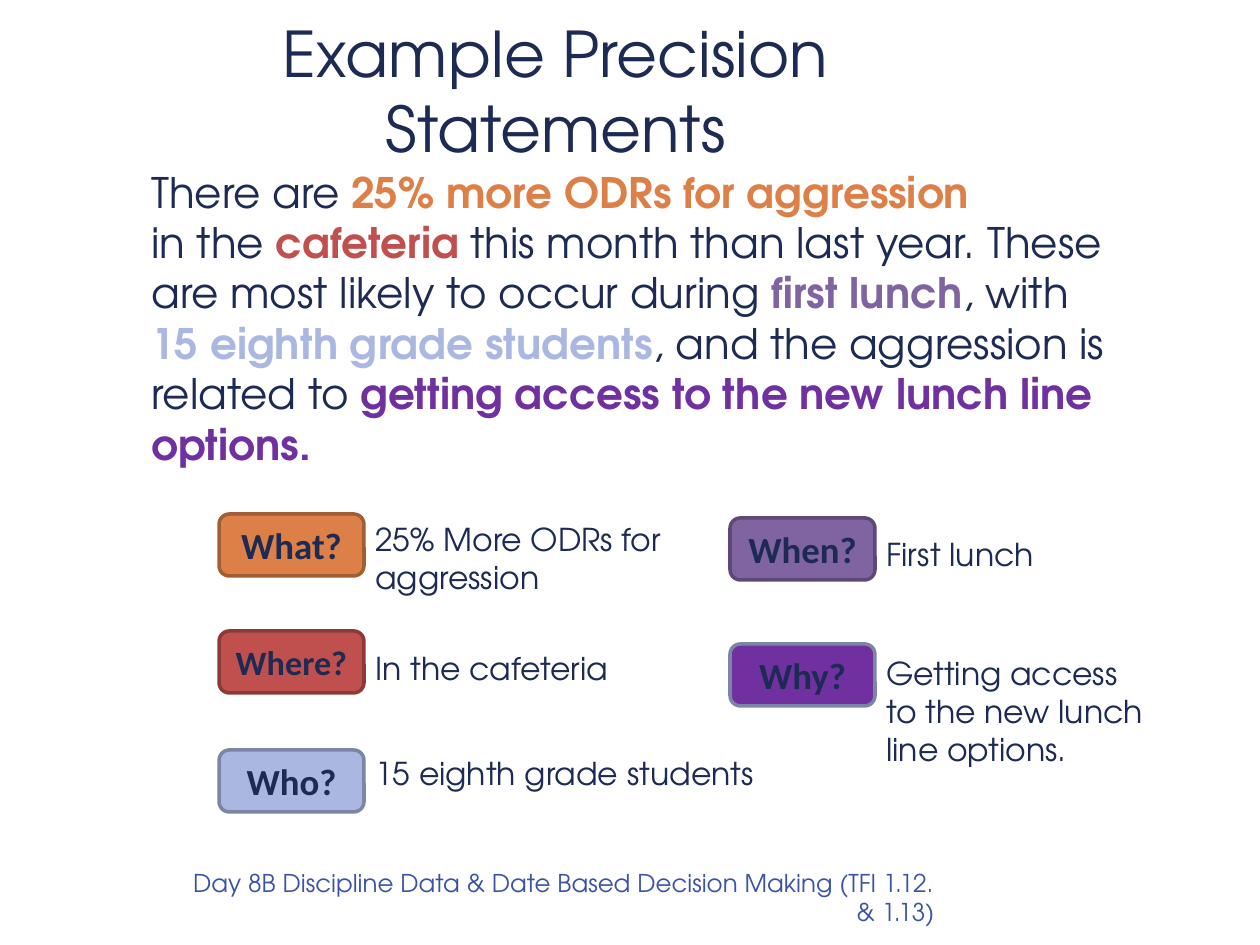
from typing import NamedTuple

from pptx import Presentation
from pptx.dml.color import RGBColor
from pptx.enum.shapes import MSO_SHAPE
from pptx.enum.text import MSO_ANCHOR, PP_ALIGN
from pptx.util import Emu, Pt

ROUND = MSO_SHAPE.ROUNDED_RECTANGLE
MIDDLE = MSO_ANCHOR.MIDDLE
LEFT, CENTER, RIGHT = PP_ALIGN.LEFT, PP_ALIGN.CENTER, PP_ALIGN.RIGHT

SCALE = 914400 / 126
FONT = "TeX Gyre Adventor"
TAG_FONT = "Calibri"

NAVY = RGBColor(0x1D, 0x2A, 0x53)
BLUE = RGBColor(0x3A, 0x53, 0xA5)
ORANGE = RGBColor(0xDD, 0x80, 0x47)
RED = RGBColor(0xC0, 0x50, 0x4D)
MAUVE = RGBColor(0x80, 0x64, 0xA2)
SKY = RGBColor(0xAA, 0xB7, 0xE1)
PURPLE = RGBColor(0x70, 0x30, 0xA0)
BROWN = RGBColor(0xA1, 0x5D, 0x33)
MAROON = RGBColor(0x8C, 0x3A, 0x38)
PLUM = RGBColor(0x5D, 0x48, 0x76)
SLATE = RGBColor(0x7C, 0x85, 0xA4)

TAG_W, TAG_H = 145, 62
COL_ONE, COL_TWO = 219, 730


class Box(NamedTuple):
    left: int
    top: int
    width: int
    height: int


class Entry(NamedTuple):
    """A coloured question tag with its answer to the right."""
    label: str
    answer: str
    left: int
    top: int
    fill: RGBColor
    edge: RGBColor
    note_top: int
    note_w: int
    note_h: int
    size: float = 21


class Part(NamedTuple):
    text: str
    color: RGBColor = NAVY


ENTRIES = [
    Entry("Why?", "Getting access to the new lunch line options.",
          COL_TWO, 644, PURPLE, SLATE, 648, 292, 127),
    Entry("When?", "First lunch", COL_TWO, 518, MAUVE, PLUM, 529, 348, 50),
    Entry("Who?", "15 eighth grade students",
          COL_ONE, 750, SKY, SLATE, 748, 650, 50),
    Entry("Where?", "In the cafeteria",
          COL_ONE, 631, RED, MAROON, 643, 348, 50, 19.5),
    Entry("What?", "25% More ODRs for aggression",
          COL_ONE, 514, ORANGE, BROWN, 514, 348, 89),
]

# Each inner list is one forced line; coloured parts are bold.
LINES = [
    [Part("There are "), Part("25% more ODRs for aggression", ORANGE)],
    [
        Part("in the "), Part("cafeteria", RED),
        Part(" this month than last year. These are most likely to occur during "),
        Part("first lunch", MAUVE), Part(", with "),
        Part("15 eighth grade students", SKY),
        Part(", and the aggression is related to "),
        Part("getting access to the new lunch line options.", PURPLE),
    ],
]


def px(count: int) -> Emu:
    return Emu(round(count * SCALE))


def style(run, size: float, color: RGBColor = NAVY,
          name: str = FONT, bold: bool = False) -> None:
    font = run.font
    font.size = Pt(size)
    font.name = name
    font.bold = bold
    font.color.rgb = color


def add_frame(slide, box: Box):
    frame = slide.shapes.add_textbox(*map(px, box)).text_frame
    frame.word_wrap = True
    return frame


def add_text(slide, box: Box, text: str, size: float,
             color: RGBColor = NAVY, align: PP_ALIGN = LEFT):
    frame = add_frame(slide, box)
    frame.text = text
    para = frame.paragraphs[0]
    para.alignment = align
    style(para.runs[0], size, color)
    return frame


def add_entry(slide, entry: Entry) -> None:
    note = Box(entry.left + TAG_W - 1, entry.note_top, entry.note_w, entry.note_h)
    add_text(slide, note, entry.answer, 18)
    box = Box(entry.left, entry.top, TAG_W, TAG_H)
    tag = slide.shapes.add_shape(ROUND, *map(px, box))
    tag.shadow.inherit = False
    tag.fill.solid()
    tag.fill.fore_color.rgb = entry.fill
    tag.line.color.rgb = entry.edge
    tag.line.width = Pt(2)
    frame = tag.text_frame
    frame.text = entry.label
    frame.vertical_anchor = MIDDLE
    para = frame.paragraphs[0]
    para.alignment = CENTER
    style(para.runs[0], entry.size, NAVY, TAG_FONT, True)


def add_story(slide, box: Box) -> None:
    """Write the precision statement with its key facts picked out."""
    para = add_frame(slide, box).paragraphs[0]
    for index, line in enumerate(LINES):
        if index:
            para.add_line_break()
        for part in line:
            run = para.add_run()
            run.text = part.text
            style(run, 24, part.color, bold=part.color != NAVY)


def main() -> None:
    deck = Presentation()
    deck.slide_width, deck.slide_height = px(1260), px(945)
    slide = deck.slides.add_slide(deck.slide_layouts[6])

    footer = add_text(
        slide, Box(173, 823, 774, 81),
        "Day 8B Discipline Data & Date Based Decision Making (TFI 1.12. & 1.13)",
        14, BLUE, RIGHT)
    footer.margin_top = px(45)
    for entry in ENTRIES:
        add_entry(slide, entry)
    add_story(slide, Box(139, 160, 997, 564))
    title = add_text(slide, Box(150, 40, 811, 100),
                     "Example Precision Statements", 36, align=CENTER)
    title.vertical_anchor = MIDDLE

    deck.save("out.pptx")


if __name__ == "__main__":
    main()
